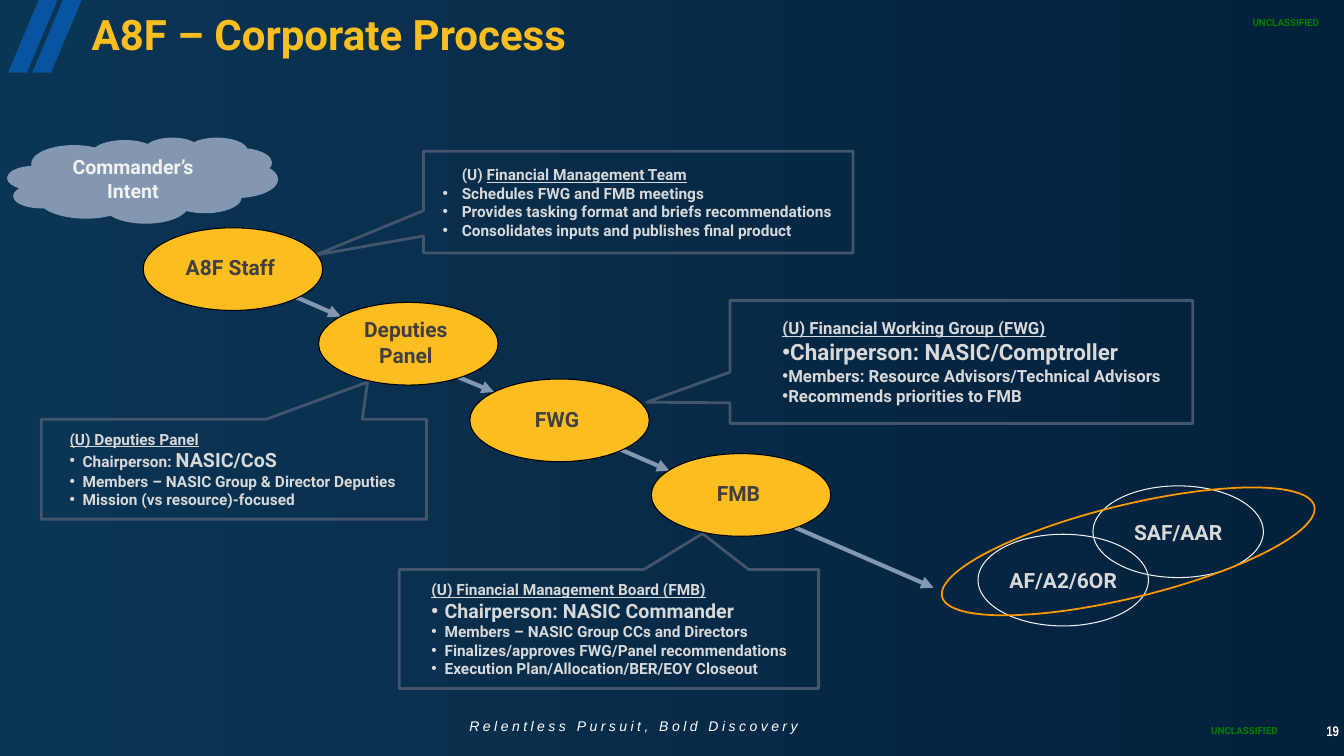
from lxml.etree import SubElement
from pptx import Presentation
from pptx.dml.color import RGBColor
from pptx.enum.shapes import MSO_CONNECTOR, MSO_SHAPE
from pptx.enum.text import MSO_ANCHOR, PP_ALIGN
from pptx.oxml.ns import qn
from pptx.util import Inches, Pt

COLORS = {
    "night": "02213C", "navy": "0B3555", "stripe": "0954A0", "gold": "FBBD1F",
    "steel": "8497B0", "slate": "44546A", "pale": "D9D9D9", "light": "F2F2F2",
    "white": "FFFFFF", "black": "000000", "charcoal": "404040",
    "green": "008000", "orange": "FF9900",
}
COLORS = {name: RGBColor.from_string(value) for name, value in COLORS.items()}

presentation = Presentation()
presentation.slide_width = Inches(13.33)
presentation.slide_height = Inches(7.5)
slide = presentation.slides.add_slide(presentation.slide_layouts[6])

background = slide.background.fill
background.gradient()
background.gradient_angle = 180
for stop, name in zip(background.gradient_stops, ("night", "navy")):
    stop.color.rgb = COLORS[name]


def add_shape(kind, box, fill=None, line=None, width=0.75, adjustments=()):
    shape = slide.shapes.add_shape(kind, *map(Inches, box))
    shape.shadow.inherit = False
    for surface, name in ((shape.fill, fill), (shape.line.fill, line)):
        if name:
            surface.solid()
            surface.fore_color.rgb = COLORS[name]
        else:
            surface.background()
    if line:
        shape.line.width = Pt(width)
    for index, value in enumerate(adjustments):
        shape.adjustments[index] = value
    return shape


def write(shape, paragraphs, color, base, align=PP_ALIGN.CENTER, spacing=1.0, insets=(0.1, 0.05)):
    frame = shape.text_frame
    frame.word_wrap = True
    frame.vertical_anchor = MSO_ANCHOR.MIDDLE
    frame.margin_left, frame.margin_right = map(Inches, insets)
    for index, runs in enumerate(paragraphs):
        paragraph = frame.add_paragraph() if index else frame.paragraphs[0]
        paragraph.alignment = align
        paragraph.line_spacing = spacing
        for text, changes in runs:
            run = paragraph.add_run()
            run.text = text
            for name, value in {"name": "Roboto", "bold": True, **base, **changes}.items():
                setattr(run.font, name, Pt(value) if name == "size" else value)
            run.font.color.rgb = COLORS[color]
    return frame


for left in (0.32, 0.08):
    add_shape(MSO_SHAPE.PARALLELOGRAM, (left, 0, 0.49, 0.72), "stripe", adjustments=[0.62])

ARROWS = [
    (1.93, 2.51, 3.38, 3.14),
    (4.28, 3.63, 4.9, 3.89),
    (5.19, 4.04, 6.64, 4.67),
    (7.81, 5.2, 9.26, 5.83),
]
for ends in ARROWS:
    arrow = slide.shapes.add_connector(MSO_CONNECTOR.STRAIGHT, *map(Inches, ends))
    arrow.line.color.rgb = COLORS["steel"]
    arrow.line.width = Pt(3)
    SubElement(arrow.line._ln, qn("a:tailEnd"), type="triangle")
    SubElement(arrow._element.spPr, qn("a:effectLst"))

LABELS = [
    ("A8F – Corporate Process", (0.81, 0.08, 12.18, 0.58), "gold", {"size": 30}, PP_ALIGN.LEFT, (0.1, 0.1)),
    ("UNCLASSIFIED", (10.4, 0.05, 2.78, 0.36), "green", {"size": 7}, PP_ALIGN.RIGHT, (0.1, 0.1)),
    ("UNCLASSIFIED", (9.99, 7.08, 2.78, 0.36), "green", {"size": 7}, PP_ALIGN.RIGHT, (0.1, 0.1)),
    ("Relentless Pursuit, Bold Discovery", (3.9, 7.08, 4.77, 0.27), "white",
     {"size": 10, "name": "Arial", "bold": False, "italic": True}, PP_ALIGN.CENTER, (0.1, 0.1)),
    ("19", (12.92, 7.08, 0.41, 0.36), "white", {"size": 10, "name": "Arial Narrow"}, PP_ALIGN.RIGHT, (0.05, 0.05)),
]
for text, box, color, font, align, insets in LABELS:
    label = slide.shapes.add_textbox(*map(Inches, box))
    frame = write(label, [[(text, {})]], color, font, align, 0.9, insets)
    if font.get("italic"):
        frame.paragraphs[0].runs[0].font._element.set("spc", "250")

UNDERLINED = {"underline": True}
CALLOUTS = [
    ((4.2, 1.5, 4.26, 1.01), (-0.751, 0.52), 11, 0.19, (0.19, -0.19), (0.19, 0), [
        [("(U) ", {}), ("Financial Management Team", UNDERLINED)],
        [("Schedules FWG and FMB meetings", {})],
        [("Provides tasking format and briefs recommendations", {})],
        [("Consolidates inputs and publishes final product", {})],
    ]),
    ((7.24, 2.98, 4.59, 1.22), (-0.68, 0.328), 12, 0.33, (0, 0.19), (0, 0.19), [
        [("(U) Financial Working Group (FWG)", UNDERLINED)],
        [("Chairperson: NASIC/Comptroller", {"size": 16})],
        [("Members: Resource Advisors/Technical Advisors", {})],
        [("Recommends priorities to FMB", {})],
    ]),
    ((3.96, 5.65, 4.16, 1.18), (0.223, -0.802), 11, 0.32, (0.13, -0.13), (0.13, -0.13), [
        [("(U) Financial Management Board (FMB)", UNDERLINED)],
        [("Chairperson: NASIC Commander", {"size": 14})],
        [("Members – NASIC Group CCs and Directors", {})],
        [("Finalizes/approves FWG/Panel recommendations", {})],
        [("Execution Plan/Allocation/BER/EOY Closeout", {})],
    ]),
    ((0.41, 4.16, 3.82, 0.99), (0.347, -0.873), 11, 0.28, (0.13, -0.13), (0.13, -0.13), [
        [("(U) Deputies Panel", UNDERLINED)],
        [("Chairperson: ", {}), ("NASIC/CoS", {"size": 14})],
        [("Members – NASIC Group & Director Deputies", {})],
        [("Mission (vs resource)-focused", {})],
    ]),
]
for box, pointer, size, inset, bullet_indent, heading_indent, paragraphs in CALLOUTS:
    callout = add_shape(MSO_SHAPE.RECTANGULAR_CALLOUT, box, None, "slate", 2, pointer)
    frame = write(callout, paragraphs, "pale", {"size": size}, PP_ALIGN.LEFT, insets=(inset, 0.05))
    for index, paragraph in enumerate(frame.paragraphs):
        properties = paragraph._p.get_or_add_pPr()
        margin, indent = bullet_indent if index else heading_indent
        properties.set("marL", str(Inches(margin)))
        properties.set("indent", str(Inches(indent)))
        if index:
            SubElement(properties, qn("a:buFont"), typeface="Arial")
            SubElement(properties, qn("a:buChar"), char="•")

cloud = add_shape(MSO_SHAPE.CLOUD, (0.08, 1.37, 2.67, 0.84), "steel", "steel", 1)
write(cloud, [[("Commander’s", {})], [("Intent", {})]], "light", {"size": 14}, insets=(0.1, 0.1))

STAGES = [
    (1.42, 2.26, ["A8F Staff"]),
    (3.16, 3, ["Deputies", "Panel"]),
    (4.66, 3.76, ["FWG"]),
    (6.46, 4.5, ["FMB"]),
]
for left, top, lines in STAGES:
    stage = add_shape(MSO_SHAPE.OVAL, (left, top, 1.78, 0.82), "gold", "black")
    frame = write(stage, [[(line, {})] for line in lines], "charcoal", {"size": 15}, spacing=0.9, insets=(0, 0.05))
    frame.margin_top = frame.margin_bottom = 0
    for paragraph in frame.paragraphs[1:]:
        paragraph.space_before = Pt(3)

for left, top, text in ((9.7, 5.3, "AF/A2/6OR"), (10.84, 4.82, "SAF/AAR")):
    office = add_shape(MSO_SHAPE.OVAL, (left, top, 1.69, 0.91), None, "light")
    write(office, [[(text, {})]], "pale", {"size": 15}, insets=(0, 0))

ring = add_shape(MSO_SHAPE.OVAL, (9.29, 5.01, 3.8, 0.92), None, "orange", 1.25)
ring.rotation = -13.7

presentation.save("out.pptx")
